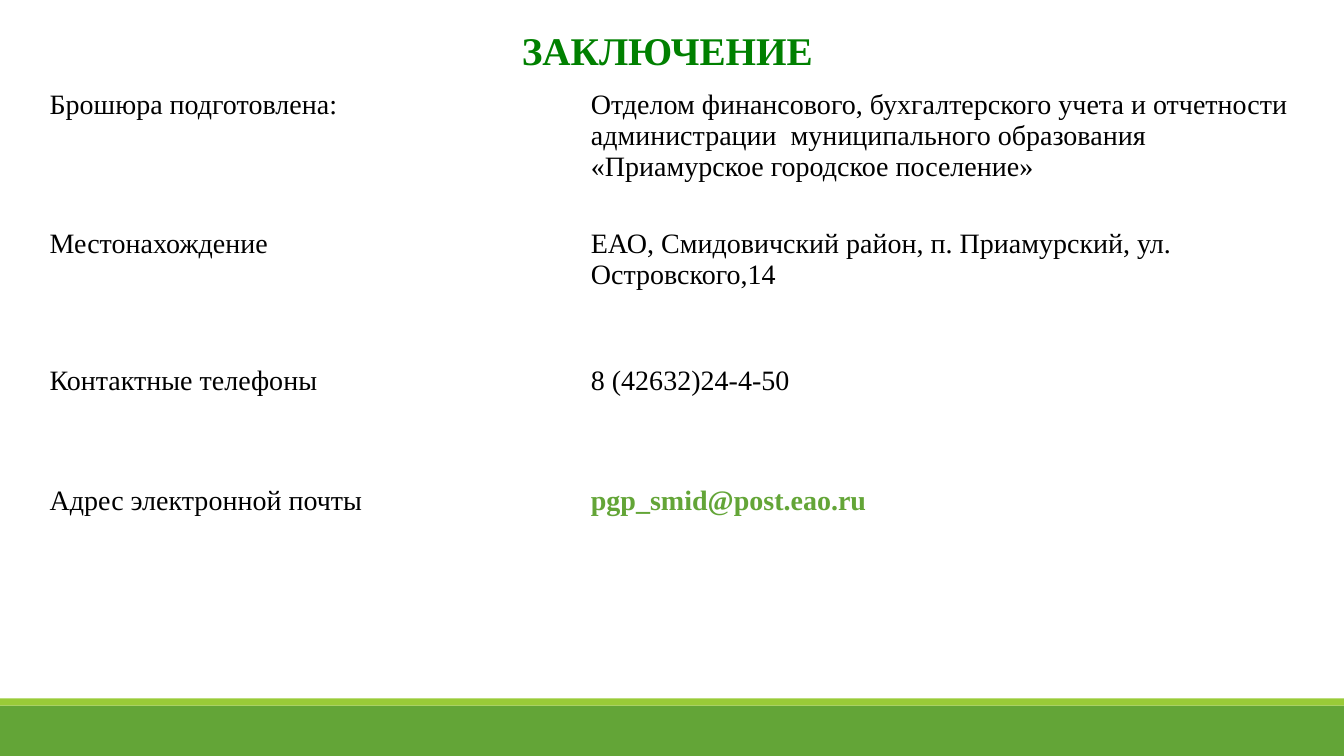
from pptx import Presentation
from pptx.dml.color import RGBColor
from pptx.enum.shapes import MSO_SHAPE as Shape
from pptx.enum.text import MSO_AUTO_SIZE as Fit
from pptx.util import Cm, Pt

WIDTH, HEIGHT = 33.87, 19.05
GREEN, LIME, DARK, BLACK = "63A537", "99CB38", "008000", "000000"

# Row height, top margin, label, value
ROWS = [
    (3.5, 0.13, "Брошюра подготовлена:",
     "Отделом финансового, бухгалтерского учета и отчетности "
     "администрации  муниципального образования "
     "«Приамурское городское поселение»"),
    (2.54, 0.13, "Местонахождение",
     "ЕАО, Смидовичский район, п. Приамурский, ул. Островского,14"),
    (2.03, 1.04, "Контактные телефоны", "8 (42632)24-4-50"),
    (4.02, 2.03, "Адрес электронной почты", "pgp_smid@post.eao.ru"),
    (3.22, 0.13, "", ""),
]
COLS = (13.64, 18.72)


def paint(color, value):
    color.rgb = RGBColor.from_string(value)


class Page:
    font = "Times New Roman"

    def __init__(self, slide):
        self.slide = slide

    def label(self, frame, text, size, color=BLACK, bold=False):
        """Put one styled run of text into a frame."""
        run = frame.paragraphs[0].add_run()
        run.text = text
        style = {"name": self.font, "size": Pt(size), "bold": bold}
        for key, value in style.items():
            setattr(run.font, key, value)
        paint(run.font.color, color)

    def band(self, top, height, color):
        """Draw a bar across the full slide width."""
        bar = self.slide.shapes.add_shape(
            Shape.RECTANGLE, 0, Cm(top), Cm(WIDTH), Cm(height))
        bar.shadow.inherit = False
        bar.fill.solid()
        paint(bar.fill.fore_color, color)
        bar.line.fill.background()

    def title(self, text, left, top, width, height):
        box = self.slide.shapes.add_textbox(
            Cm(left), Cm(top), Cm(width), Cm(height))
        frame = box.text_frame
        frame.word_wrap = False
        frame.auto_size = Fit.SHAPE_TO_FIT_TEXT
        self.label(frame, text, 28, DARK, True)

    def table(self, left, top, cols, rows):
        high = sum(row[0] for row in rows)
        grid = self.slide.shapes.add_table(
            len(rows), len(cols), Cm(left), Cm(top),
            Cm(sum(cols)), Cm(high)).table
        grid.first_row = grid.horz_banding = False
        for col, width in zip(grid.columns, cols):
            col.width = Cm(width)
        for row, (height, margin, *texts) in zip(grid.rows, rows):
            row.height = Cm(height)
            for cell, text in zip(row.cells, texts):
                cell.fill.background()
                cell.margin_left = Cm(0.64)
                cell.margin_top = Cm(margin)
                if text:
                    mail = "@" in text
                    self.label(cell.text_frame, text, 20,
                               GREEN if mail else BLACK, mail)


def main():
    deck = Presentation()
    deck.slide_width, deck.slide_height = Cm(WIDTH), Cm(HEIGHT)
    page = Page(deck.slides.add_slide(deck.slide_layouts[6]))
    page.band(17.78, 1.27, GREEN)
    page.band(17.6, 0.18, LIME)
    page.title("ЗАКЛЮЧЕНИЕ", 12.9, 0.53, 7.92, 1.45)
    page.table(0.61, 2.13, COLS, ROWS)
    deck.save("out.pptx")


if __name__ == "__main__":
    main()
